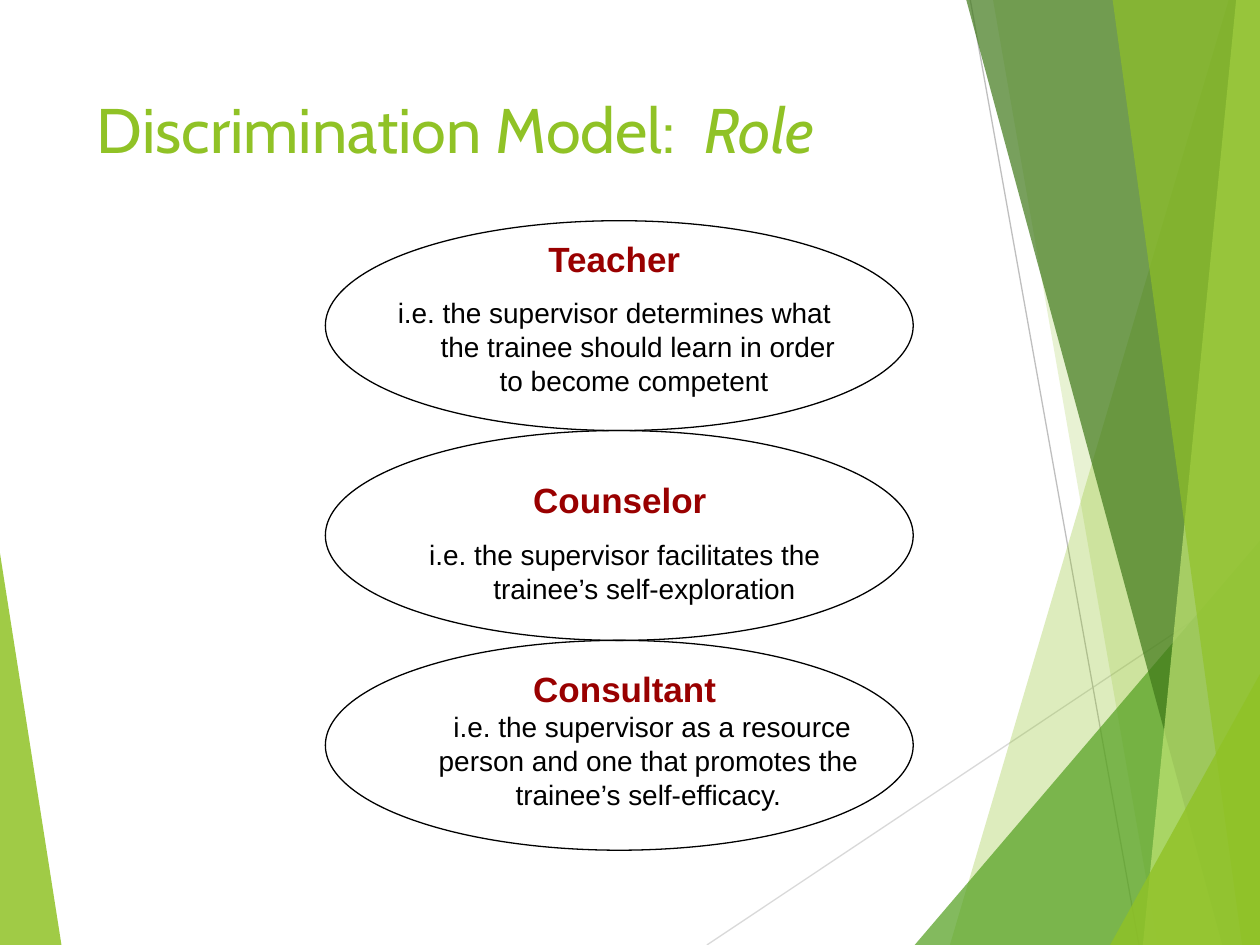
from dataclasses import dataclass

from lxml.etree import SubElement
from pptx import Presentation
from pptx.dml.color import RGBColor
from pptx.enum.shapes import MSO_CONNECTOR, MSO_SHAPE
from pptx.enum.text import PP_ALIGN
from pptx.oxml.ns import qn
from pptx.util import Cm, Pt


@dataclass(frozen=True)
class Theme:
    lime: str = "90C226"
    green: str = "54A021"
    forest: str = "3F7819"
    pale: str = "C0E474"
    red: str = "990000"
    black: str = "000000"
    light_gray: str = "D9D9D9"
    gray: str = "BFBFBF"
    title_font: str = "Cabin"
    body_font: str = "Arial"
    title_size: int = 36
    heading_size: int = 20
    body_size: int = 16
    line_width: float = 0.75


THEME = Theme()
WIDTH, HEIGHT = 25.4, 19.05
OVAL_LEFT, OVAL_TOP, OVAL_WIDTH, OVAL_HEIGHT = 6.56, 4.45, 11.85, 4.23
HANGING = 0.95

# heading, body, text left, text top, text height, body hangs below a gap
ROLES = [
    ("Teacher",
     "i.e. the supervisor determines what the trainee should learn in order "
     "to become competent ", 7.41, 4.66, 3.5, True),
    ("Counselor ",
     "i.e. the supervisor facilitates the trainee’s self-exploration ",
     7.62, 9.53, 2.82, True),
    ("Consultant",
     " i.e. the supervisor as a resource person and one that promotes the "
     "trainee’s self-efficacy.", 7.62, 13.34, 5.08, False),
]


def add_facet(page, points, color, opacity):
    """Draw a borderless polygon; opacity is a percentage."""
    corners = [(Cm(x), Cm(y)) for x, y in points]
    builder = page.shapes.build_freeform(*corners[0], scale=1.0)
    builder.add_line_segments(corners[1:], close=True)
    facet = builder.convert_to_shape()
    facet.shadow.inherit = False
    facet.fill.solid()
    facet.fill.fore_color.rgb = RGBColor.from_string(color)
    facet.line.fill.background()
    color_node = facet.fill._xPr.find(qn("a:solidFill"))[0]
    SubElement(color_node, qn("a:alpha"), val=str(opacity * 1000))


def add_band(page, top_x, bottom_x, color, opacity):
    """Fill from a slanted edge to the right side of the page."""
    points = [(top_x, 0), (bottom_x, HEIGHT), (WIDTH, HEIGHT), (WIDTH, 0)]
    add_facet(page, points, color, opacity)


def add_corner(page, left, top, color, opacity):
    """Fill a triangle in the bottom right corner."""
    points = [(left, HEIGHT), (WIDTH, top), (WIDTH, HEIGHT)]
    add_facet(page, points, color, opacity)


def add_line(page, start, end, color):
    line = page.shapes.add_connector(
        MSO_CONNECTOR.STRAIGHT, *(Cm(value) for value in start + end))
    line.line.color.rgb = RGBColor.from_string(color)
    line.line.width = Pt(THEME.line_width)
    SubElement(line._element.spPr, qn("a:effectLst"))


def add_background(page):
    add_facet(page, [(0, 11.15), (1.24, HEIGHT), (0, HEIGHT)], THEME.lime, 85)
    add_line(page, (14.25, HEIGHT), (WIDTH, 11.61), THEME.light_gray)
    add_line(page, (19.56, 0), (22.96, HEIGHT), THEME.gray)
    add_band(page, 24.77, 19.15, THEME.lime, 30)
    add_band(page, 20.02, 23.34, THEME.lime, 20)
    add_corner(page, 18.44, 10.9, THEME.green, 72)
    add_band(page, 19.48, 24.64, THEME.forest, 70)
    add_band(page, 24.92, 23.04, THEME.pale, 70)
    add_band(page, 22.43, 25.04, THEME.lime, 65)
    add_corner(page, 22.38, 13.59, THEME.lime, 80)


def add_text_frame(page, left, top, width, height):
    box = page.shapes.add_textbox(Cm(left), Cm(top), Cm(width), Cm(height))
    box.text_frame.word_wrap = True
    return box.text_frame


def style_font(font, name, size, color, bold=False):
    font.name = name
    font.size = Pt(size)
    font.bold = bold
    font.color.rgb = RGBColor.from_string(color)


def set_indent(para, hanging):
    properties = para._p.get_or_add_pPr()
    properties.set("marL", str(Cm(HANGING)))
    properties.set("indent", str(-Cm(HANGING) if hanging else 0))


def add_title(page):
    para = add_text_frame(page, 1.7, 1.7, 17.63, 3.66).paragraphs[0]
    style_font(para.font, THEME.title_font, THEME.title_size, THEME.lime)
    para.add_run().text = "Discrimination Model:  "
    role = para.add_run()
    role.text = "Role"
    role.font.italic = True


def add_oval(page, top):
    oval = page.shapes.add_shape(
        MSO_SHAPE.OVAL, Cm(OVAL_LEFT), Cm(top), Cm(OVAL_WIDTH), Cm(OVAL_HEIGHT))
    oval.shadow.inherit = False
    oval.fill.background()
    oval.line.color.rgb = RGBColor.from_string(THEME.black)
    oval.line.width = Pt(THEME.line_width)


def add_role_text(page, heading, body, left, top, height, hanging):
    frame = add_text_frame(page, left, top, 9.95, height)
    heading_para, body_para = frame.paragraphs[0], frame.add_paragraph()
    heading_para.text, body_para.text = heading, body
    style_font(heading_para.font, THEME.body_font, THEME.heading_size,
               THEME.red, bold=True)
    style_font(body_para.font, THEME.body_font, THEME.body_size, THEME.black)
    for para in frame.paragraphs:
        para.alignment = PP_ALIGN.CENTER
    set_indent(heading_para, True)
    set_indent(body_para, hanging)
    if hanging:
        body_para.space_before = Pt(9.5)


def main():
    deck = Presentation()
    deck.slide_width, deck.slide_height = Cm(WIDTH), Cm(HEIGHT)
    page = deck.slides.add_slide(deck.slide_layouts[6])
    add_background(page)
    add_title(page)
    for index, role in enumerate(ROLES):
        add_oval(page, OVAL_TOP + index * OVAL_HEIGHT)
        add_role_text(page, *role)
    deck.save("out.pptx")


if __name__ == "__main__":
    main()
